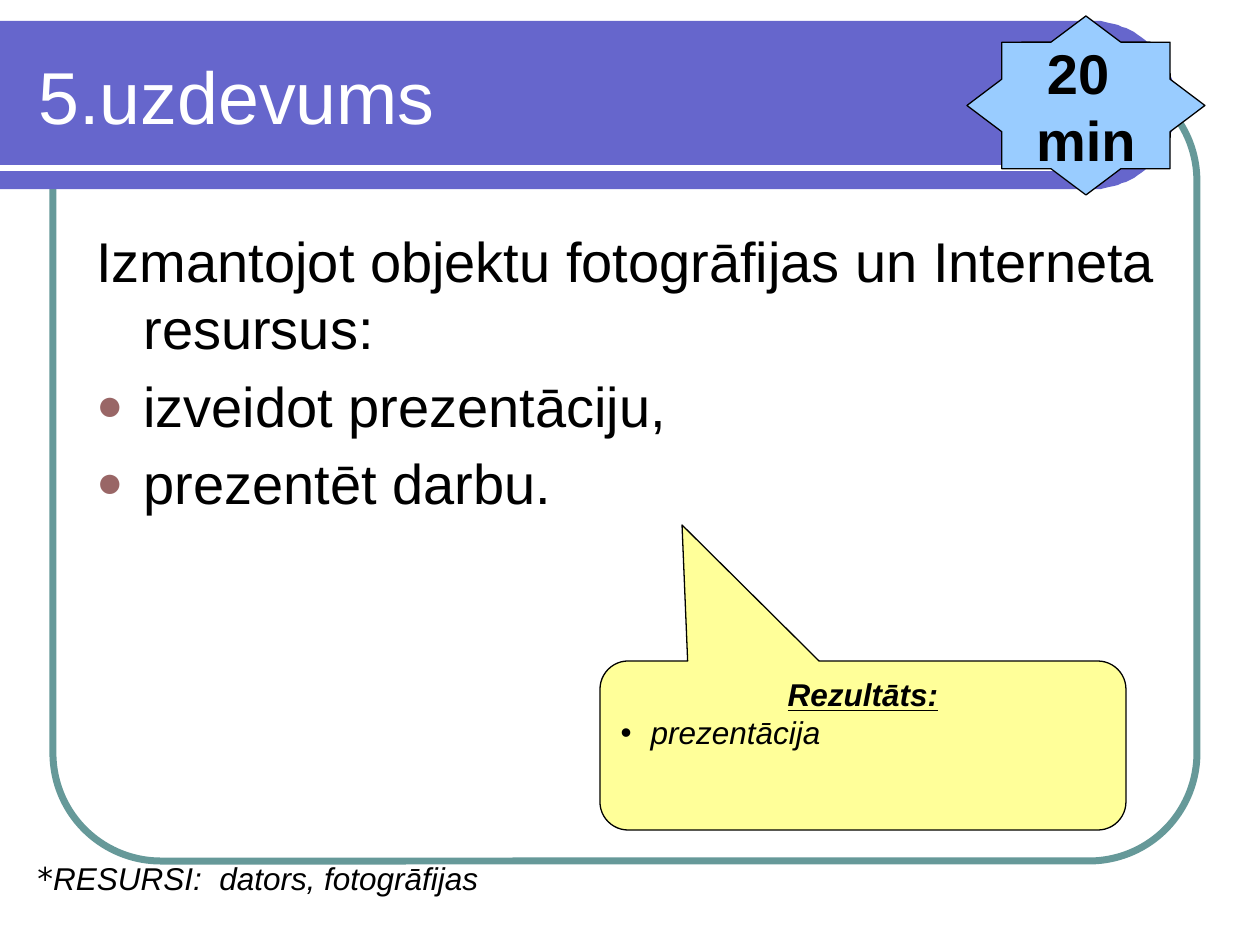
import math
from dataclasses import dataclass

from lxml import etree
from pptx import Presentation
from pptx.dml.color import RGBColor
from pptx.enum.shapes import MSO_CONNECTOR, MSO_SHAPE
from pptx.enum.text import MSO_ANCHOR, PP_ALIGN
from pptx.oxml.ns import qn
from pptx.util import Emu, Pt

ROUNDED = MSO_SHAPE.ROUNDED_RECTANGLE
CALLOUT = MSO_SHAPE.ROUNDED_RECTANGULAR_CALLOUT
STAR = MSO_SHAPE.STAR_8_POINT
STRAIGHT = MSO_CONNECTOR.STRAIGHT
TOP, MIDDLE = MSO_ANCHOR.TOP, MSO_ANCHOR.MIDDLE
LEFT, CENTER = PP_ALIGN.LEFT, PP_ALIGN.CENTER
EMU_PER_PX = 914400 / 126


@dataclass(frozen=True)
class Theme:
    banner: str = "6666CC"
    frame: str = "669999"
    bullet: str = "996666"
    note: str = "FFFF99"
    star: str = "99CCFF"
    ink: str = "000000"
    paper: str = "FFFFFF"
    font: str = "Arial"
    symbol_font: str = "DejaVu Sans"
    title_size: int = 42
    body_size: int = 32
    note_size: int = 18


THEME = Theme()


def px(length):
    return Emu(round(length * EMU_PER_PX))


def rgb(code):
    return RGBColor.from_string(code)


def style_shape(shape, fill=None, line=None, width=0.75):
    shape.shadow.inherit = False
    if fill:
        shape.fill.solid()
        shape.fill.fore_color.rgb = rgb(fill)
    else:
        shape.fill.background()
    if line:
        shape.line.color.rgb = rgb(line)
        shape.line.width = Pt(width)
    else:
        shape.line.fill.background()


def add_preset(slide, kind, box, adjustments, **style):
    shape = slide.shapes.add_shape(kind, *map(px, box))
    for index, value in enumerate(adjustments):
        shape.adjustments[index] = value
    style_shape(shape, **style)
    return shape


def add_banner(slide, top, bottom, right):
    radius = (bottom - top) / 2
    angles = [math.radians(degrees) for degrees in range(-90, 91, 3)]
    curve = [
        (right - radius + radius * math.cos(angle), top + radius + radius * math.sin(angle))
        for angle in angles
    ]
    builder = slide.shapes.build_freeform(0, top, scale=EMU_PER_PX)
    builder.add_line_segments(curve + [(0, bottom)], close=True)
    style_shape(builder.convert_to_shape(), fill=THEME.banner)


def add_rule(slide, start, end, color, width):
    rule = slide.shapes.add_connector(STRAIGHT, *map(px, start + end))
    rule.line.color.rgb = rgb(color)
    rule.line.width = Pt(width)
    etree.SubElement(rule._element.spPr, qn("a:effectLst"))


def add_text_area(slide, box):
    return slide.shapes.add_textbox(*map(px, box)).text_frame


def prepare_frame(frame, anchor=TOP, wrap=True):
    frame.word_wrap = wrap
    frame.vertical_anchor = anchor
    return frame


def add_paragraph(frame, first=False, align=LEFT, before=0):
    paragraph = frame.paragraphs[0] if first else frame.add_paragraph()
    paragraph.alignment = align
    paragraph.space_before = Pt(before)
    return paragraph


def add_run(paragraph, text, size, color=THEME.ink, font=THEME.font,
            bold=False, italic=False, underline=False):
    run = paragraph.add_run()
    run.text = text
    run.font.name = font
    run.font.size = Pt(size)
    run.font.color.rgb = rgb(color)
    run.font.bold = bold
    run.font.italic = italic
    run.font.underline = underline


def hang(paragraph, indent):
    properties = paragraph._p.get_or_add_pPr()
    properties.set("marL", str(px(indent)))
    properties.set("indent", str(-px(indent)))
    return properties


def add_bullet(paragraph, indent, char, color, percent):
    properties = hang(paragraph, indent)
    bullet_color = etree.SubElement(properties, qn("a:buClr"))
    etree.SubElement(bullet_color, qn("a:srgbClr"), val=color)
    etree.SubElement(properties, qn("a:buSzPct"), val=str(percent * 1000))
    etree.SubElement(properties, qn("a:buFont"), typeface=THEME.font)
    etree.SubElement(properties, qn("a:buChar"), char=char)


def add_title(slide):
    frame = prepare_frame(add_text_area(slide, (26, 32, 1105, 126)), MIDDLE)
    add_run(add_paragraph(frame, True), "5.uzdevums", THEME.title_size, THEME.paper)


def add_task(slide):
    frame = prepare_frame(add_text_area(slide, (84, 220, 1092, 311)))
    intro = add_paragraph(frame, True, before=6)
    hang(intro, 47)
    add_run(intro, "Izmantojot objektu fotogrāfijas un Interneta resursus:", THEME.body_size)
    for step in ("izveidot prezentāciju,", "prezentēt darbu."):
        paragraph = add_paragraph(frame, before=6)
        add_bullet(paragraph, 47, "●", THEME.bullet, 80)
        add_run(paragraph, step, THEME.body_size)


def add_result(slide):
    callout = add_preset(slide, CALLOUT, (600, 661, 526, 169), (-0.344, -1.305, 0.167),
                         fill=THEME.note, line=THEME.ink)
    frame = prepare_frame(callout.text_frame)
    heading = add_paragraph(frame, True, CENTER)
    add_run(heading, "Rezultāts:", THEME.note_size, bold=True, italic=True, underline=True)
    outcome = add_paragraph(frame)
    add_bullet(outcome, 30, "•", THEME.ink, 100)
    add_run(outcome, "prezentācija", THEME.note_size, italic=True)


def add_resources(slide):
    frame = prepare_frame(add_text_area(slide, (25, 857, 1131, 47)))
    paragraph = add_paragraph(frame, True, before=4)
    paragraph.line_spacing = 0.9
    add_run(paragraph, "*", THEME.note_size, font=THEME.symbol_font, italic=True)
    add_run(paragraph, "RESURSI:  dators, fotogrāfijas", THEME.note_size, italic=True)


def add_duration(slide):
    star = add_preset(slide, STAR, (967, 16, 238, 179), (0.383,),
                      fill=THEME.star, line=THEME.ink)
    frame = prepare_frame(star.text_frame, MIDDLE, wrap=False)
    for index, word in enumerate(("20 ", "min")):
        add_run(add_paragraph(frame, index == 0, CENTER), word, THEME.body_size, bold=True)


def main():
    deck = Presentation()
    deck.slide_width, deck.slide_height = px(1260), px(945)
    slide = deck.slides.add_slide(deck.slide_layouts[6])
    slide.background.fill.solid()
    slide.background.fill.fore_color.rgb = rgb(THEME.paper)
    add_preset(slide, ROUNDED, (53, 73, 1144, 788), (0.137,), line=THEME.frame, width=4)
    add_banner(slide, 21, 189, 1176)
    add_rule(slide, (0, 168), (1113, 168), THEME.paper, 3)
    add_title(slide)
    add_task(slide)
    add_result(slide)
    add_resources(slide)
    add_duration(slide)
    deck.save("out.pptx")


if __name__ == "__main__":
    main()
